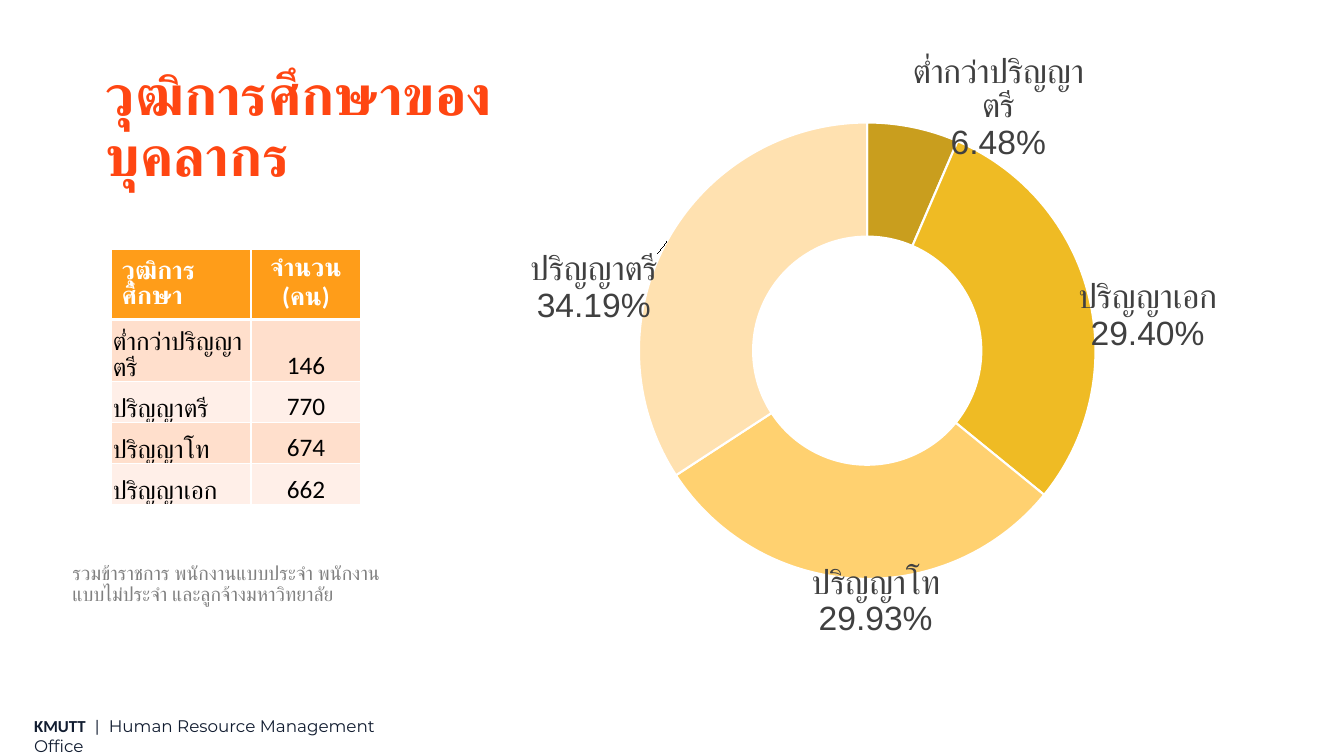
"""Staff education slide: a headcount table beside a doughnut chart of shares."""
from copy import deepcopy

from pptx import Presentation, oxml
from pptx import util as u
from pptx.chart import data
from pptx.dml.color import RGBColor
from pptx.enum import chart as ch
from pptx.enum import text
from pptx.oxml import ns

WHITE = RGBColor(0xFF, 0xFF, 0xFF)
BLACK = RGBColor(0x00, 0x00, 0x00)
NAVY = RGBColor(0x11, 0x1C, 0x30)
VERMILION = RGBColor(0xFF, 0x46, 0x12)
ORANGE = RGBColor(0xFF, 0x9D, 0x19)
BANDS = [RGBColor(0xFF, 0xDF, 0xCC), RGBColor(0xFF, 0xEF, 0xE8)]
GREY = RGBColor(0x80, 0x80, 0x80)
CHARCOAL = RGBColor(0x40, 0x40, 0x40)


def style(font, name, size, color, bold=False):
    for key, value in {"name": name, "size": u.Pt(size), "bold": bold}.items():
        setattr(font, key, value)
    font.color.rgb = color


def layout_xml(**places):
    parts = "".join(f'<c:{key} val="{value}"/>' for key, value in places.items())
    return oxml.parse_xml(f'<c:layout {ns.nsdecls("c")}><c:manualLayout>{parts}</c:manualLayout></c:layout>')


deck = Presentation()
deck.slide_width, deck.slide_height = u.Inches(13.33), u.Inches(7.5)
slide = deck.slides.add_slide(deck.slide_layouts[5])

footer = slide.shapes.add_textbox(u.Inches(0.24), u.Inches(7.05), u.Inches(3.62), u.Inches(0.3)).text_frame
footer.word_wrap = True
for words, face, bold in [
    ("KMUTT", "Calibri", True),
    ("  |  ", "Calibri", False),
    ("Human Resource Management Office", "Montserrat", False),
]:
    run = footer.paragraphs[0].add_run()
    run.text = words
    style(run.font, face, 12, NAVY, bold)

heading = slide.shapes.title
for key, inches in {"left": 0.95, "top": 0.14, "width": 4.08, "height": 1.78}.items():
    setattr(heading, key, u.Inches(inches))
heading.text_frame.text = "วุฒิการศึกษาของบุคลากร"
heading.text_frame.auto_size = text.MSO_AUTO_SIZE.NONE
heading.text_frame.vertical_anchor = text.MSO_ANCHOR.BOTTOM
heading_line = heading.text_frame.paragraphs[0]
heading_line.alignment = text.PP_ALIGN.LEFT
heading_line.line_spacing = 0.9
style(heading_line.runs[0].font, "Lato", 40, VERMILION, True)

headcounts = [
    ("วุฒิการศึกษา", "จำนวน (คน)"),
    ("ต่ำกว่าปริญญาตรี", "146"),
    ("ปริญญาตรี", "770"),
    ("ปริญญาโท", "674"),
    ("ปริญญาเอก", "662"),
]
headcount_table = slide.shapes.add_table(
    len(headcounts), 2, u.Inches(1.11), u.Inches(2.47), u.Inches(2.47), u.Inches(2.05)
).table
for column, width in zip(headcount_table.columns, (1.38, 1.09)):
    column.width = u.Inches(width)
for r, entries in enumerate(headcounts):
    headcount_table.rows[r].height = u.Inches(0.41)
    header = r == 0
    for c, words in enumerate(entries):
        cell = headcount_table.cell(r, c)
        cell.text = words
        cell.vertical_anchor = text.MSO_ANCHOR.MIDDLE if header else text.MSO_ANCHOR.BOTTOM
        if not header:
            cell.margin_left = cell.margin_top = cell.margin_right = u.Inches(0.01)
            cell.margin_bottom = 0
        line = cell.text_frame.paragraphs[0]
        line.alignment = text.PP_ALIGN.CENTER if c else text.PP_ALIGN.LEFT
        style(line.runs[0].font, "Calibri", 18, WHITE if header else BLACK, header)
        borders = {"lnL": 1, "lnR": 1, "lnT": 3 if r == 1 else 1, "lnB": 3 if header else 1}
        for edge, points in borders.items():
            cell._tc.get_or_add_tcPr().append(oxml.parse_xml(
                f'<a:{edge} {ns.nsdecls("a")} w="{u.Pt(points)}"><a:solidFill>'
                f'<a:srgbClr val="{WHITE}"/></a:solidFill></a:{edge}>'))
        cell.fill.solid()
        cell.fill.fore_color.rgb = ORANGE if header else BANDS[(r - 1) % 2]

note = slide.shapes.add_textbox(u.Inches(0.62), u.Inches(5.54), u.Inches(3.46), u.Inches(0.43)).text_frame
note.word_wrap = True
note.text = "รวมข้าราชการ พนักงานแบบประจำ พนักงานแบบไม่ประจำ และลูกจ้างมหาวิทยาลัย"
note.paragraphs[0].line_spacing = 0.9
style(note.paragraphs[0].runs[0].font, "Calibri", 14, GREY)

degrees = [
    ("ต่ำกว่าปริญญาตรี", 6.48, RGBColor(0xC9, 0x9E, 0x1E), (0.11, -0.11)),
    ("ปริญญาเอก", 29.4, RGBColor(0xEF, 0xBB, 0x24), (0.13, 0.01)),
    ("ปริญญาโท", 29.93, RGBColor(0xFF, 0xD1, 0x70), (0.02, 0.12)),
    ("ปริญญาตรี", 34.19, RGBColor(0xFF, 0xE1, 0xB0), (-0.14, 0.03)),
]
shares = data.CategoryChartData()
shares.categories = [degree[0] for degree in degrees]
shares.add_series("Series 1", [degree[1] for degree in degrees])
doughnut = slide.shapes.add_chart(
    ch.XL_CHART_TYPE.DOUGHNUT, u.Inches(4.16), u.Inches(0.24), u.Inches(8.71), u.Inches(6.68), shares
).chart
doughnut.has_legend = doughnut.has_title = False
style(doughnut.font, "Arial", 10, BLACK)
ring = doughnut.plots[0]
ring.vary_by_categories = True
labels = ring.series[0].data_labels
for key, value in {
    "show_percentage": True,
    "show_category_name": True,
    "show_value": False,
    "number_format": "0.00%",
    "number_format_is_linked": False,
}.items():
    setattr(labels, key, value)
style(labels.font, "Arial", 24, CHARCOAL)

chart_xml = doughnut._chartSpace
chart_xml.find(".//" + ns.qn("c:holeSize")).set("val", "75")
plot_area = chart_xml.find(".//" + ns.qn("c:plotArea"))
for automatic in plot_area.findall(ns.qn("c:layout")):
    plot_area.remove(automatic)
plot_area.insert(0, layout_xml(
    layoutTarget="inner", xMode="edge", yMode="edge", x=0.25, y=0.14, w=0.52, h=0.69))

labels_xml = chart_xml.find(".//" + ns.qn("c:ser")).find(ns.qn("c:dLbls"))
separator = oxml.parse_xml(f'<c:separator {ns.nsdecls("c")}>\n</c:separator>')
labels_xml.find(ns.qn("c:showBubbleSize")).addnext(separator)
shared = [part for part in labels_xml if part.tag != ns.qn("c:showLeaderLines")]
for i, (degree, share, color, (dx, dy)) in enumerate(degrees):
    slice_format = ring.series[0].points[i].format
    slice_format.fill.solid()
    slice_format.fill.fore_color.rgb = color
    slice_format.line.color.rgb = WHITE
    slice_format.line.width = u.Pt(1.5)
    label = oxml.parse_xml(f'<c:dLbl {ns.nsdecls("c")}><c:idx val="{i}"/></c:dLbl>')
    label.append(layout_xml(x=dx, y=dy))
    label.extend(deepcopy(shared))
    labels_xml.insert(i, label)

deck.save("out.pptx")
